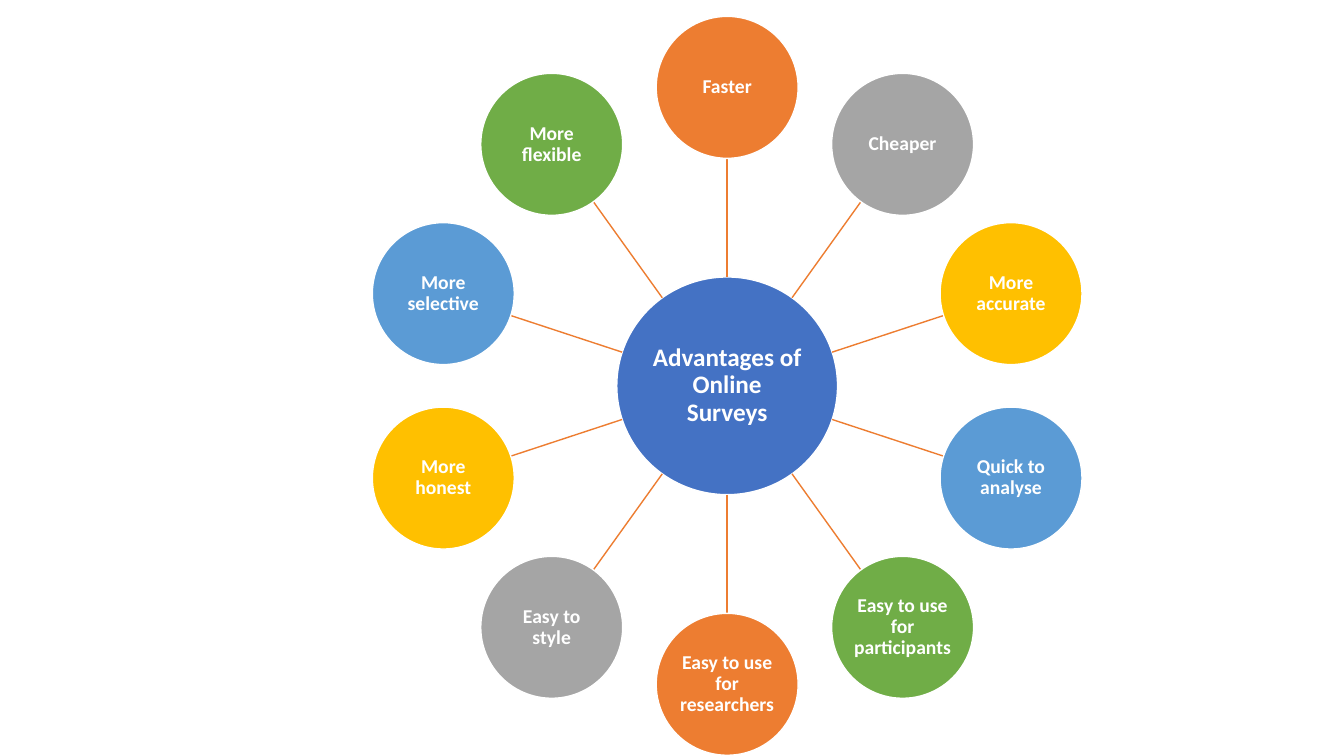
from math import cos, pi, sin

from lxml import etree
from pptx import Presentation
from pptx.dml.color import RGBColor
from pptx.enum.shapes import MSO_CONNECTOR, MSO_SHAPE
from pptx.enum.text import MSO_ANCHOR, PP_ALIGN
from pptx.oxml.ns import qn
from pptx.util import Pt

OVAL = MSO_SHAPE.OVAL
LINE = MSO_CONNECTOR.STRAIGHT
MIDDLE = MSO_ANCHOR.MIDDLE
CENTER = PP_ALIGN.CENTER

WHITE, BLUE, ORANGE = "FFFFFF", "4472C4", "ED7D31"
GREY, GOLD, SKY, GREEN = "A5A5A5", "FFC000", "5B9BD5", "70AD47"

MID_X, MID_Y = 519.4, 275.6
HUB_W, HUB_H = 157.7, 155.5
RING = 213.2
NODE = 101.4

NODES = [
    ("Faster", ORANGE),
    ("Cheaper", GREY),
    ("More accurate", GOLD),
    ("Quick to analyse", SKY),
    ("Easy to use for participants", GREEN),
    ("Easy to use for researchers", ORANGE),
    ("Easy to style", GREY),
    ("More honest", GOLD),
    ("More selective", SKY),
    ("More flexible", GREEN),
]


def color(code):
    return RGBColor.from_string(code)


class Deck:
    font = "Calibri"
    stroke = 1
    inset = 0.7
    leading = 0.9

    def __init__(self, wide, high):
        self.show = Presentation()
        self.show.slide_width = Pt(wide)
        self.show.slide_height = Pt(high)
        self.slide = self.show.slides.add_slide(self.show.slide_layouts[6])

    def disc(self, x, y, wide, high, fill, text, size):
        """Add a labelled ellipse centred on x, y."""
        disc = self.slide.shapes.add_shape(
            OVAL, Pt(x - wide / 2), Pt(y - high / 2), Pt(wide), Pt(high))
        disc.shadow.inherit = False
        disc.fill.solid()
        disc.fill.fore_color.rgb = color(fill)
        disc.line.color.rgb = color(WHITE)
        disc.line.width = Pt(self.stroke)
        frame = disc.text_frame
        frame.word_wrap = True
        frame.vertical_anchor = MIDDLE
        frame.margin_left = frame.margin_right = Pt(self.inset)
        frame.margin_top = frame.margin_bottom = Pt(self.inset)
        para = frame.paragraphs[0]
        para.alignment = CENTER
        para.line_spacing = self.leading
        run = para.add_run()
        run.text = text
        run.font.name = self.font
        run.font.size = Pt(size)
        run.font.bold = True
        run.font.color.rgb = color(WHITE)

    def spoke(self, x1, y1, x2, y2, tint):
        spoke = self.slide.shapes.add_connector(
            LINE, Pt(x1), Pt(y1), Pt(x2), Pt(y2))
        spoke.line.color.rgb = color(tint)
        spoke.line.width = Pt(self.stroke)
        etree.SubElement(spoke._element.spPr, qn("a:effectLst"))

    def save(self):
        self.show.save("out.pptx")


def main():
    deck = Deck(960, 540)
    deck.disc(MID_X, MID_Y, HUB_W, HUB_H, BLUE,
              "Advantages of Online Surveys", 18)
    reach = RING - NODE / 2
    for i, (text, fill) in enumerate(NODES):
        turn = 2 * pi * i / len(NODES)
        dx, dy = sin(turn), -cos(turn)
        deck.spoke(MID_X + dx * HUB_W / 2, MID_Y + dy * HUB_H / 2,
                   MID_X + dx * reach, MID_Y + dy * reach, ORANGE)
        deck.disc(MID_X + dx * RING, MID_Y + dy * RING,
                  NODE, NODE, fill, text, 14)
    deck.save()


if __name__ == "__main__":
    main()
